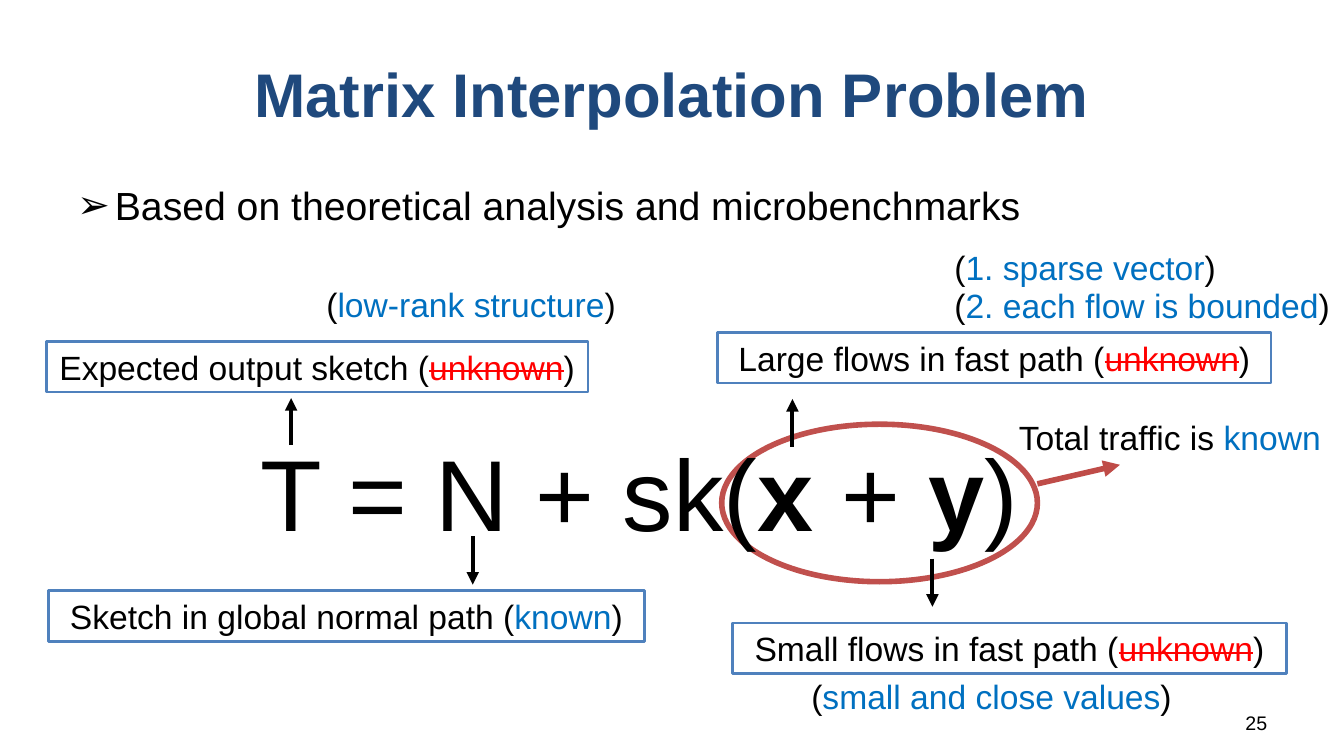
from lxml.etree import SubElement
from pptx import Presentation
from pptx.dml.color import RGBColor
from pptx.enum.shapes import MSO_CONNECTOR as CONNECTOR, MSO_SHAPE as SHAPE
from pptx.enum.text import MSO_ANCHOR as ANCHOR, PP_ALIGN as ALIGN
from pptx.oxml.ns import qn
from pptx.util import Pt

COLORS = {
    "title": "1F497D",
    "text": "000000",
    "known": "0070C0",
    "unknown": "FF0000",
    "box": "4F81BD",
    "ring": "C0504D",
    "ring_arrow": "BF4C48",
    "paper": "FFFFFF",
}
LABEL_HEIGHT = 36


def rgb(name):
    return RGBColor.from_string(COLORS[name])


def add_run(paragraph, text, size, color="text", bold=False, strike=False):
    run = paragraph.add_run()
    run.text = text
    run.font.name = "Arial"
    run.font.size = Pt(size)
    run.font.bold = bold
    run.font.color.rgb = rgb(color)
    if strike:
        run.font._element.set("strike", "sngStrike")


def add_label_runs(paragraph, lead, key, tail, color="known"):
    """Write a black label with one coloured key phrase."""
    add_run(paragraph, lead, 24)
    add_run(paragraph, key, 24, color, strike=color == "unknown")
    if tail:
        add_run(paragraph, tail, 24)


def add_text(slide, left, top, width, height, wrap=True):
    box = slide.shapes.add_textbox(Pt(left), Pt(top), Pt(width), Pt(height))
    box.text_frame.word_wrap = wrap
    return box.text_frame.paragraphs[0]


def add_note(slide, left, top, width, lead, key, tail):
    paragraph = add_text(slide, left, top, width, LABEL_HEIGHT, wrap=False)
    add_label_runs(paragraph, lead, key, tail)


def add_outlined(slide, kind, left, top, width, height, color, weight):
    outlined = slide.shapes.add_shape(kind, Pt(left), Pt(top), Pt(width), Pt(height))
    outlined.shadow.inherit = False
    outlined.fill.solid()
    outlined.fill.fore_color.rgb = rgb("paper")
    outlined.line.color.rgb = rgb(color)
    outlined.line.width = Pt(weight)
    return outlined


def add_term_box(slide, left, top, width, lead, status):
    frame = add_outlined(slide, SHAPE.RECTANGLE, left, top, width,
                         LABEL_HEIGHT, "box", 2).text_frame
    frame.word_wrap = True
    frame.vertical_anchor = ANCHOR.TOP
    paragraph = frame.paragraphs[0]
    paragraph.alignment = ALIGN.CENTER
    add_label_runs(paragraph, f"{lead} (", status, ")", status)


def add_arrow(slide, start, end, color="text", weight=3):
    arrow = slide.shapes.add_connector(
        CONNECTOR.STRAIGHT, *(Pt(value) for value in (*start, *end)))
    arrow.line.color.rgb = rgb(color)
    arrow.line.width = Pt(weight)
    SubElement(arrow.line._get_or_add_ln(), qn("a:tailEnd"), type="triangle")
    SubElement(arrow._element.spPr, qn("a:effectLst"))


def set_title(slide, text):
    title = slide.shapes.title
    title.left, title.top, title.width, title.height = Pt(48), Pt(21.6), Pt(864), Pt(90)
    title.text_frame.vertical_anchor = ANCHOR.MIDDLE
    paragraph = title.text_frame.paragraphs[0]
    paragraph.alignment = ALIGN.CENTER
    add_run(paragraph, text, 44, "title", bold=True)


def add_bullet(slide, text):
    paragraph = add_text(slide, 48, 126, 864, 79)
    paragraph.space_before = Pt(3)
    properties = paragraph._p.get_or_add_pPr()
    properties.set("marL", str(Pt(27)))
    properties.set("indent", str(-Pt(27)))
    SubElement(properties, qn("a:buFont"), typeface="Arial")
    SubElement(properties, qn("a:buChar"), char="➢")
    add_run(paragraph, text, 28)


def add_formula(slide):
    paragraph = add_text(slide, 179.3, 303.8, 598, 95)
    paragraph.space_before = Pt(7)
    for text, bold in (("T = N + sk(", False), ("x", True), (" + ", False),
                       ("y", True), (")", False)):
        add_run(paragraph, text, 72, bold=bold)


def main():
    deck = Presentation()
    deck.slide_width, deck.slide_height = Pt(960), Pt(540)
    slide = deck.slides.add_slide(deck.slide_layouts[5])

    # Ring around the fast path vectors, behind the formula
    add_outlined(slide, SHAPE.OVAL, 515.5, 303, 225.5, 112.5, "ring", 4)

    # Heading
    set_title(slide, "Matrix Interpolation Problem")
    add_bullet(slide, "Based on theoretical analysis and microbenchmarks")

    # Boxes that explain each term
    for term in (
        (33, 244, 387, "Expected output sketch", "unknown"),
        (34.6, 422, 425.5, "Sketch in global normal path", "known"),
        (512.6, 237.6, 395.3, "Large flows in fast path", "unknown"),
        (523.4, 445, 395.3, "Small flows in fast path", "unknown"),
    ):
        add_term_box(slide, *term)

    # Arrows from each term to its box
    for x, start, end in ((208, 318, 284.4), (337.7, 383, 417.6),
                          (566, 319, 285), (666, 399, 433.4)):
        add_arrow(slide, (x, start), (x, end))

    # Known properties
    for note in (
        (226, 199.4, 223, "(", "low-rank structure", ")"),
        (674.6, 172.8, 203, "(", "1. sparse vector", ")"),
        (674.6, 200.2, 286, "(", "2. each flow is bounded", ")"),
        (572.4, 479.5, 275, "(", "small and close values", ")"),
        (720.7, 294.5, 232.6, "Total traffic is ", "known", ""),
    ):
        add_note(slide, *note)

    # Formula and the arrow to the total traffic
    add_formula(slide)
    add_arrow(slide, (741, 345.6), (800, 332), "ring_arrow", 4)

    # Slide number
    number = add_text(slide, 688.3, 504, 224, 25)
    number.alignment = ALIGN.RIGHT
    add_run(number, "25", 14)

    deck.save("out.pptx")


if __name__ == "__main__":
    main()
